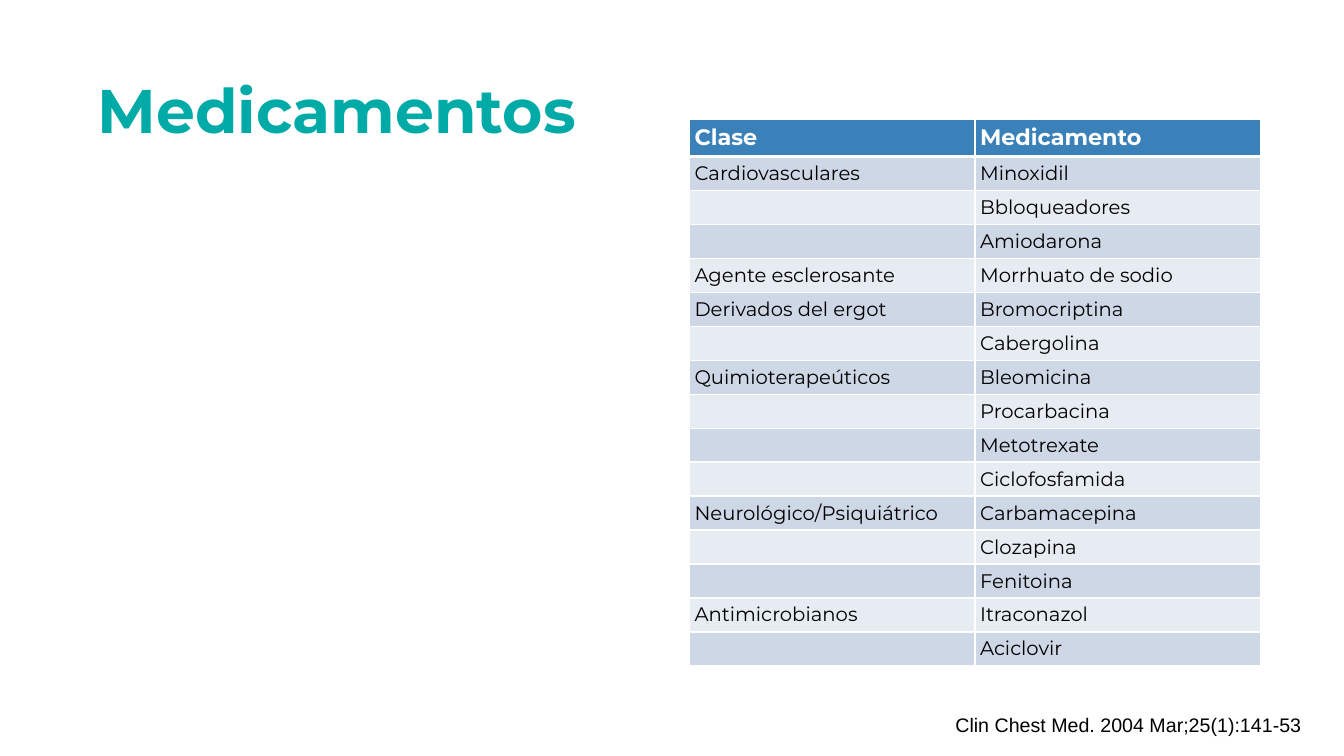
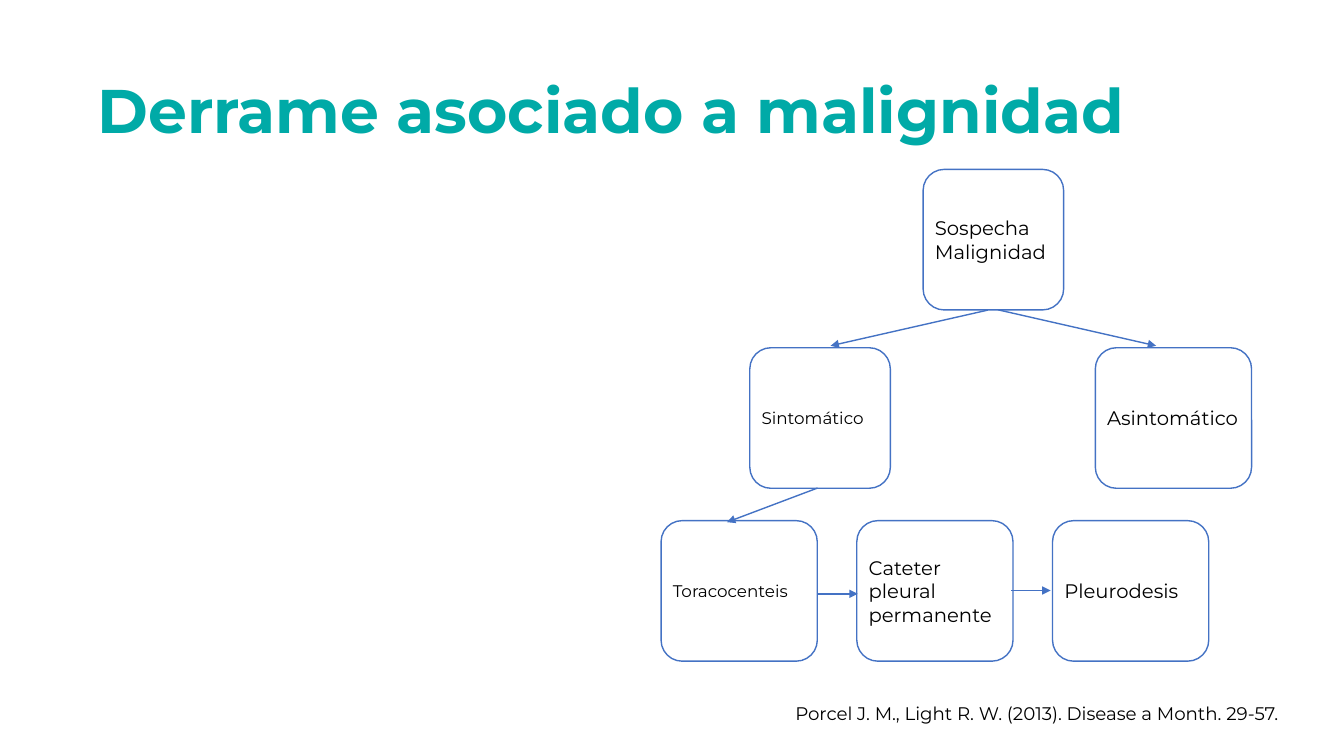
from lxml import etree
from pptx import Presentation
from pptx.dml.color import RGBColor
from pptx.enum.shapes import MSO_CONNECTOR, MSO_SHAPE
from pptx.enum.text import MSO_ANCHOR, MSO_AUTO_SIZE, PP_ALIGN
from pptx.oxml.ns import qn
from pptx.util import Pt

ROUND_RECT = MSO_SHAPE.ROUNDED_RECTANGLE
STRAIGHT = MSO_CONNECTOR.STRAIGHT
LEFT = PP_ALIGN.LEFT
TOP, MIDDLE = MSO_ANCHOR.TOP, MSO_ANCHOR.MIDDLE
NO_AUTOSIZE = MSO_AUTO_SIZE.NONE
TITLE_ONLY = 5

COLORS = {
    "title": "00AAA7",
    "text": "000000",
    "white": "FFFFFF",
    "header": "3A81BA",
    "band_dark": "CDD7E6",
    "band_light": "E7ECF3",
    "line": "4472C4",
}

DRUGS = {
    "Cardiovasculares": ["Minoxidil", "Bbloqueadores", "Amiodarona"],
    "Agente esclerosante": ["Morrhuato de sodio"],
    "Derivados del ergot": ["Bromocriptina", "Cabergolina"],
    "Quimioterapeúticos": ["Bleomicina", "Procarbacina", "Metotrexate", "Ciclofosfamida"],
    "Neurológico/Psiquiátrico": ["Carbamacepina", "Clozapina", "Fenitoina"],
    "Antimicrobianos": ["Itraconazol", "Aciclovir"],
}


def rgb(name):
    return RGBColor.from_string(COLORS[name])


class Deck:
    font = "Montserrat"
    inset = 3.6

    def __init__(self):
        self.prs = Presentation()
        self.prs.slide_width, self.prs.slide_height = Pt(960), Pt(540)
        self.s = None

    def slide(self, title):
        self.s = self.prs.slides.add_slide(self.prs.slide_layouts[TITLE_ONLY])
        sp = self.s.shapes.title
        sp.left, sp.top, sp.width, sp.height = Pt(66), Pt(28.8), Pt(828), Pt(104.4)
        self.set_text(sp.text_frame, title, 44, "title", bold=True, anchor=MIDDLE)
        sp.text_frame.paragraphs[0].line_spacing = 0.9

    def style(self, p, size, color, bold=False, font=None):
        p.alignment = LEFT
        for r in p.runs:
            r.font.name = font or self.font
            r.font.size = Pt(size)
            r.font.bold = bold
            r.font.color.rgb = rgb(color)

    def set_text(self, tf, text, size, color="text", bold=False, anchor=TOP,
                 font=None, inset=inset):
        tf.text = text
        tf.word_wrap = True
        tf.auto_size = NO_AUTOSIZE
        tf.vertical_anchor = anchor
        tf.margin_left = tf.margin_right = tf.margin_top = tf.margin_bottom = Pt(inset)
        self.style(tf.paragraphs[0], size, color, bold, font)

    def citation(self, text, left, top, width, size, font=None):
        sp = self.s.shapes.add_textbox(Pt(left), Pt(top), Pt(width), Pt(23))
        self.set_text(sp.text_frame, text, size, font=font)

    def box(self, text, left, top, width, size=14):
        sp = self.s.shapes.add_shape(ROUND_RECT, Pt(left), Pt(top), Pt(width), Pt(100.4))
        sp.adjustments[0] = 0.15
        sp.shadow.inherit = False
        sp.fill.solid()
        sp.fill.fore_color.rgb = rgb("white")
        sp.line.color.rgb = rgb("line")
        sp.line.width = Pt(1)
        self.set_text(sp.text_frame, text, size, anchor=MIDDLE, inset=4)

    def arrow(self, x1, y1, x2, y2):
        c = self.s.shapes.add_connector(STRAIGHT, Pt(x1), Pt(y1), Pt(x2), Pt(y2))
        c.line.color.rgb = rgb("line")
        c.line.width = Pt(1)
        spPr = c._element.spPr
        etree.SubElement(spPr.find(qn("a:ln")), qn("a:tailEnd"), type="triangle")
        etree.SubElement(spPr, qn("a:effectLst"))

    def borders(self, cell, top=1, bottom=1):
        tcPr = cell._tc.get_or_add_tcPr()
        for side, width in (("L", 1), ("R", 1), ("T", top), ("B", bottom)):
            ln = etree.SubElement(tcPr, qn(f"a:ln{side}"), w=str(int(Pt(width))))
            fill = etree.SubElement(ln, qn("a:solidFill"))
            etree.SubElement(fill, qn("a:srgbClr"), val=COLORS["white"])

    def cell(self, cell, text, size, color, fill, bold):
        cell.margin_left = cell.margin_right = Pt(self.inset)
        cell.margin_top = cell.margin_bottom = Pt(self.inset)
        cell.fill.solid()
        cell.fill.fore_color.rgb = rgb(fill)
        p = cell.text_frame.paragraphs[0]
        p.text = text
        self.style(p, size, color, bold)
        if not text:  # keeps the default size from stretching an empty row
            etree.SubElement(p._p, qn("a:endParaRPr"), sz=str(size * 100))

    def table(self, rows, left, top, col_width, header_height, row_height):
        n_cols = len(rows[0])
        height = header_height + row_height * (len(rows) - 1)
        tbl = self.s.shapes.add_table(len(rows), n_cols, Pt(left), Pt(top),
                                      Pt(col_width * n_cols), Pt(height)).table
        for i, row in enumerate(rows):
            header = i == 0
            tbl.rows[i].height = Pt(header_height if header else row_height)
            band = "band_dark" if i % 2 else "band_light"
            for j, text in enumerate(row):
                cell = tbl.cell(i, j)
                self.borders(cell, top=3 if i == 1 else 1, bottom=3 if header else 1)
                if header:
                    self.cell(cell, text, 16, "white", "header", True)
                else:
                    self.cell(cell, text, 14, "text", band, False)


def drugs_slide(deck):
    deck.slide("Medicamentos")
    rows = [("Clase", "Medicamento")]
    for group, drugs in DRUGS.items():
        rows += [("" if i else group, drug) for i, drug in enumerate(drugs)]
    deck.table(rows, 492.5, 85, 204, 26.4, 24.27)
    deck.citation("Clin Chest Med. 2004 Mar;25(1):141-53", 678.8, 506, 270, 14, font="Arial")


def malignancy_slide(deck):
    deck.slide("Derrame asociado a malignidad")
    narrow, wide = 100.4, 111.6
    top_row, middle_row, bottom_row = 121, 248.4, 371.9
    deck.box("Sospecha Malignidad", 659.4, top_row, narrow)
    deck.box("Sintomático", 535.6, middle_row, narrow, 12)
    deck.box("Asintomático", 782.4, middle_row, wide)
    steps = (("Toracocenteis", 12), ("Cateter pleural permanente", 14), ("Pleurodesis", 14))
    for i, (text, size) in enumerate(steps):
        deck.box(text, 472.2 + i * 139.8, bottom_row, wide, size)
    for ends in ((705.6, 221.5, 593.3, 247), (712.8, 221.3, 825.8, 247),
                 (584, 348.6, 519.3, 373), (584, 424.2, 612.7, 424.2),
                 (722.2, 421.8, 750.4, 421.8)):
        deck.arrow(*ends)
    deck.citation("Porcel J. M., Light R. W. (2013). Disease a Month. 29-57.",
                  564.5, 498.2, 372, 13)


def main():
    deck = Deck()
    drugs_slide(deck)
    malignancy_slide(deck)
    deck.prs.save("out.pptx")


if __name__ == "__main__":
    main()
